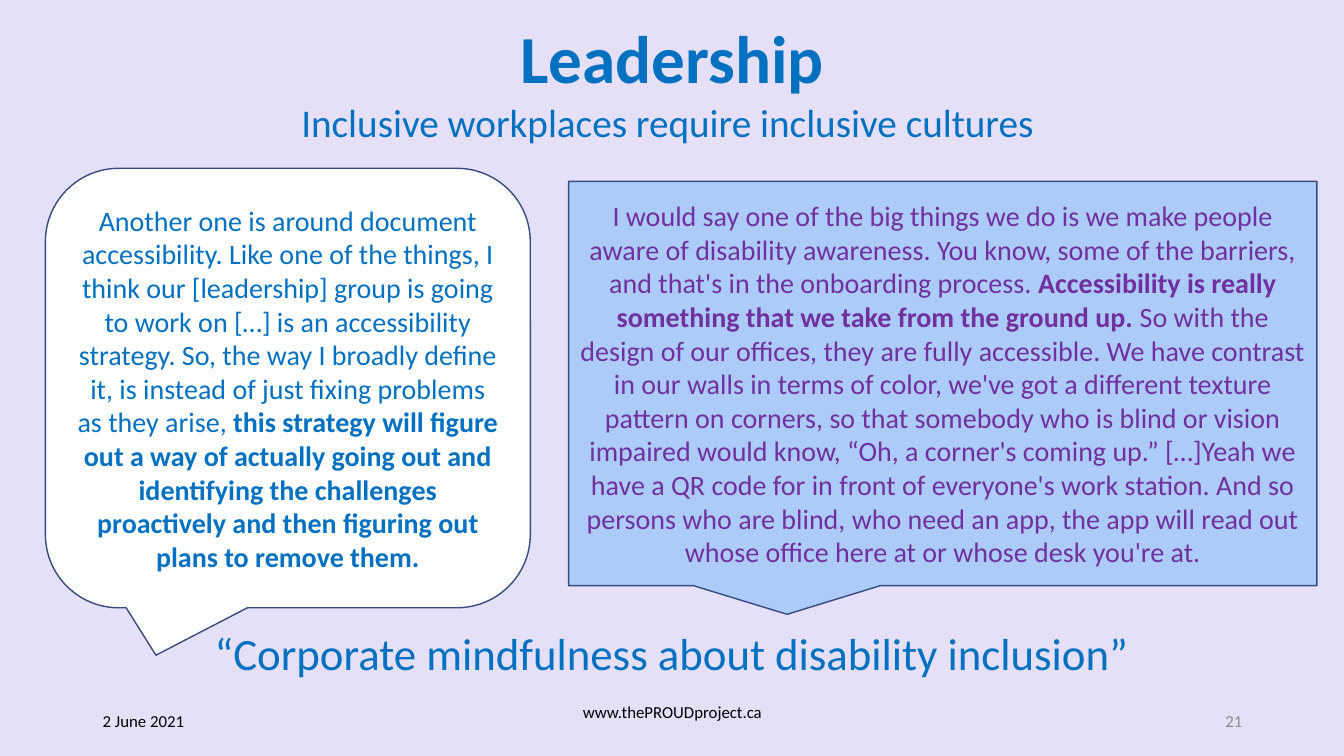
from pptx import Presentation
from pptx import util as u
from pptx.dml.color import RGBColor
from pptx.enum import shapes, text

In = u.Inches
BLUE, PURPLE, BLACK, GREY = "0070C0", "7030A0", "000000", "8C8C8C"
OUTLINE, LILAC, WHITE, SKY = "374B7F", "E5E0F8", "FFFFFF", "ACCBF9"
LEFT, CENTER, RIGHT = text.PP_ALIGN.LEFT, text.PP_ALIGN.CENTER, text.PP_ALIGN.RIGHT
TOP, MIDDLE = text.MSO_ANCHOR.TOP, text.MSO_ANCHOR.MIDDLE


def rgb(value):
    return RGBColor.from_string(value)


def write(tf, *runs, size=20, color=BLUE, align=CENTER, anchor=MIDDLE, wrap=True):
    """Fill a text frame with one paragraph of (words, bold) runs."""
    tf.word_wrap = wrap
    tf.auto_size = text.MSO_AUTO_SIZE.NONE
    tf.vertical_anchor = anchor
    p = tf.paragraphs[0]
    p.alignment = align
    for words, bold in runs:
        r = p.add_run()
        r.text = words
        r.font.name = "Calibri"
        r.font.size = u.Pt(size)
        r.font.bold = bold
        r.font.color.rgb = rgb(color)
    return p


class Deck:
    def __init__(self, prs):
        self.s = prs.slides.add_slide(prs.slide_layouts[5])
        self.s.background.fill.solid()
        self.s.background.fill.fore_color.rgb = rgb(LILAC)

    def title(self, box, words):
        sp = self.s.shapes.title
        sp.left, sp.top, sp.width, sp.height = map(In, box)
        write(sp.text_frame, (words, True), size=48).line_spacing = 0.9

    def label(self, box, words, **fmt):
        tf = self.s.shapes.add_textbox(*map(In, box)).text_frame
        write(tf, (words, False), **fmt)
        return tf

    def callout(self, kind, box, adjustments, fill, *runs, **fmt):
        sp = self.s.shapes.add_shape(kind, *map(In, box))
        for i, value in enumerate(adjustments):
            sp.adjustments[i] = value
        sp.shadow.inherit = False
        sp.fill.solid()
        sp.fill.fore_color.rgb = rgb(fill)
        sp.line.color.rgb = rgb(OUTLINE)
        sp.line.width = u.Pt(1)
        write(sp.text_frame, *runs, **fmt)


def main():
    prs = Presentation()
    prs.slide_width, prs.slide_height = In(13.33), In(7.5)
    deck = Deck(prs)

    # Heading
    deck.title((0.92, 0.18, 11.5, 0.87), "Leadership")
    deck.label((2.89, 0.93, 7.54, 0.57), "Inclusive workplaces require inclusive cultures",
               size=28, align=LEFT, anchor=TOP, wrap=False)

    # Quotes
    deck.callout(
        shapes.MSO_SHAPE.ROUNDED_RECTANGULAR_CALLOUT, (0.45, 1.67, 4.81, 4.36),
        (-0.272, 0.608, 0.167), WHITE,
        ("Another one is around document accessibility. Like one of the things, I think our "
         "[leadership] group is going to work on […] is an accessibility strategy. So, the way "
         "I broadly define it, is instead of just fixing problems as they arise, ", False),
        ("this strategy will figure out a way of actually going out and identifying the "
         "challenges proactively and then figuring out plans to remove them.", True))
    deck.callout(
        shapes.MSO_SHAPE.RECTANGULAR_CALLOUT, (5.64, 1.8, 7.42, 4.01),
        (-0.208, 0.571), SKY,
        ("I would say one of the big things we do is we make people aware of disability "
         "awareness. You know, some of the barriers, and that's in the onboarding process. ",
         False),
        ("Accessibility is really something that we take from the ground up.", True),
        (" So with the design of our offices, they are fully accessible. We have contrast in "
         "our walls in terms of color, we've got a different texture pattern on corners, so "
         "that somebody who is blind or vision impaired would know, “Oh, a corner's coming "
         "up.” […]Yeah we have a QR code for in front of everyone's work station. And so "
         "persons who are blind, who need an app, the app will read out whose office here at "
         "or whose desk you're at.", False),
        color=PURPLE)

    # Closing line
    deck.label((1.82, 6.16, 9.69, 0.64), "“Corporate mindfulness about disability inclusion”",
               size=32, anchor=TOP)

    # Footer
    deck.label((0.92, 6.95, 3, 0.4), "2 June 2021", size=12, color=BLACK, align=LEFT)
    site = deck.label((4.42, 6.95, 4.5, 0.4), "www.thePROUDproject.ca",
                      size=12, color=BLACK, anchor=TOP)
    site.margin_top = In(0.01)
    deck.label((9.42, 6.95, 3, 0.4), "21", size=12, color=GREY, align=RIGHT)

    prs.save("out.pptx")


if __name__ == "__main__":
    main()
